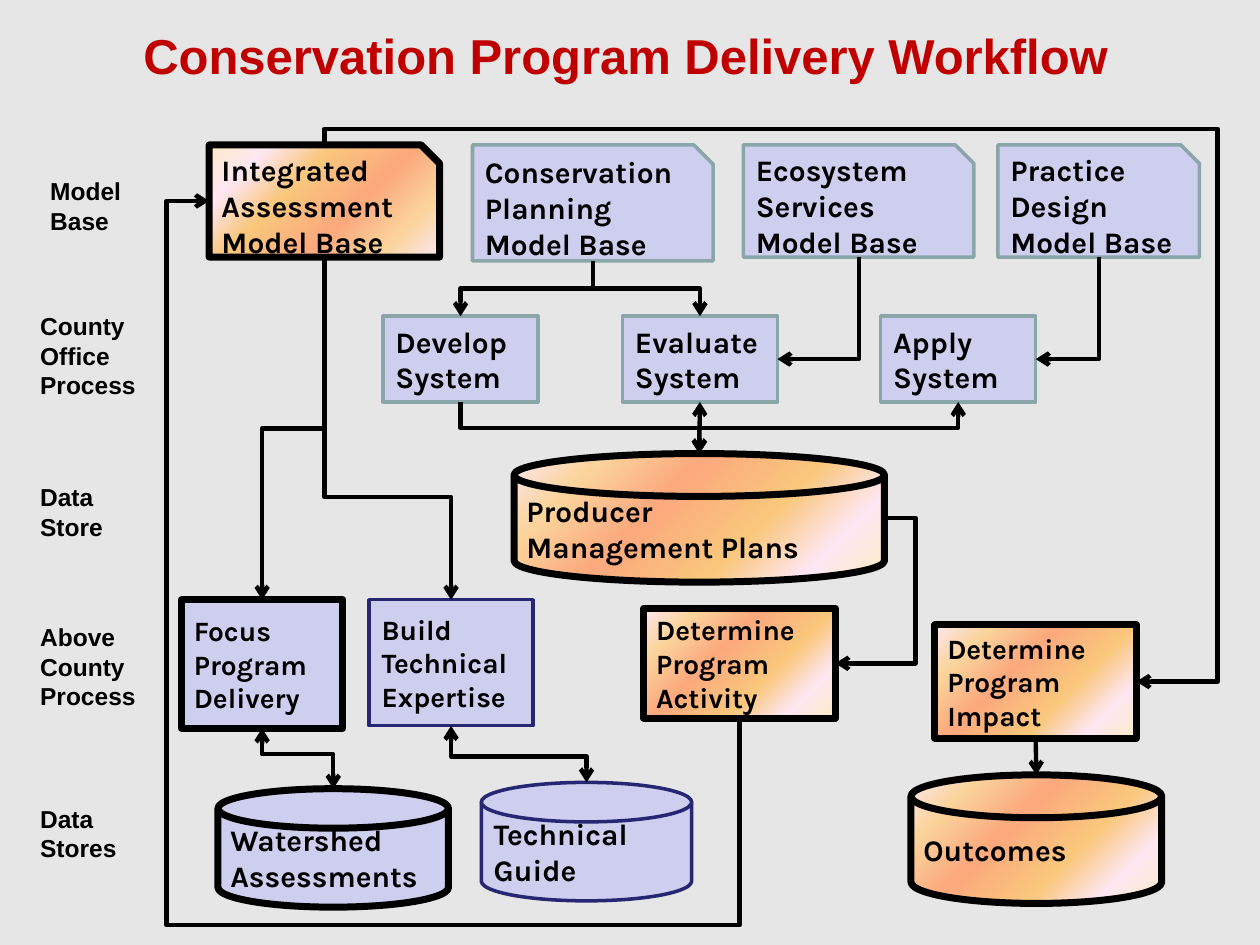
from dataclasses import dataclass

from lxml.etree import SubElement
from pptx import Presentation
from pptx.dml.color import RGBColor
from pptx.enum.shapes import MSO_CONNECTOR as LINE, MSO_SHAPE as SHAPE
from pptx.enum.text import MSO_ANCHOR, PP_ALIGN
from pptx.oxml.ns import qn
from pptx.util import Inches, Pt

TOP, LEFT, BOTTOM, RIGHT = range(4)
PROCESS, MODEL, STORE = (SHAPE.FLOWCHART_PROCESS, SHAPE.SNIP_1_RECTANGLE,
                         SHAPE.FLOWCHART_MAGNETIC_DISK)


@dataclass(frozen=True)
class Theme:
    background: str = "E6E6E6"
    title: str = "C00000"
    ink: str = "000000"
    lilac: str = "CECEEF"
    sage: str = "8AA6A8"
    navy: str = "262673"
    sunset: tuple = ((0, "FBEAC7"), (18, "FEE7F2"), (36, "FAC77D"),
                     (61, "FBA97D"), (82, "FBD49C"), (100, "FEE7F2"))
    label_font: str = "Arial"
    node_font: str = "Karla"
    title_size: int = 28
    label_size: int = 14
    node_size: int = 17
    small_node_size: int = 16
    thin: float = 2
    flow: float = 2.5
    thick: float = 4


THEME = Theme()


@dataclass(frozen=True)
class Box:
    """An area of the slide, in inches."""
    left: float
    top: float
    width: float
    height: float

    def inner(self, left, width, top=0, height=None):
        return Box(self.left + left, self.top + top, width, height or self.height)

    def emu(self):
        return [Inches(v) for v in (self.left, self.top, self.width, self.height)]


@dataclass(frozen=True)
class Look:
    line: str
    width: float
    angle: int = None  # gradient direction; plain lilac when None


PLAIN = Look(THEME.sage, THEME.thin)
SUPPORT = Look(THEME.navy, THEME.thin)
FOCUS = Look(THEME.ink, THEME.thick)
KEY = Look(THEME.ink, THEME.thick, 135)
KEY_SOURCE = Look(THEME.ink, THEME.thick, 315)


def write(frame, lines, font, size, color, align=PP_ALIGN.LEFT):
    frame.word_wrap = True
    frame.text = "\n".join(lines)
    for paragraph in frame.paragraphs:
        paragraph.alignment = align
        paragraph.font.name, paragraph.font.size = font, Pt(size)
        paragraph.font.bold = True
        paragraph.font.color.rgb = RGBColor.from_string(color)


def fill_sunset(node, angle):
    node.fill.gradient()
    node.fill.gradient_angle = angle
    stops = node._element.spPr.find(qn("a:gradFill")).find(qn("a:gsLst"))
    for stop in list(stops):
        stops.remove(stop)
    for percent, color in THEME.sunset:
        stop = SubElement(stops, qn("a:gs"), pos=str(percent * 1000))
        SubElement(stop, qn("a:srgbClr"), val=color)


def add_node(slide, kind, box, look, lines, size):
    node = slide.shapes.add_shape(kind, *box.emu())
    node.shadow.inherit = False
    if look.angle is None:
        node.fill.solid()
        node.fill.fore_color.rgb = RGBColor.from_string(THEME.lilac)
    else:
        fill_sunset(node, look.angle)
    node.line.color.rgb = RGBColor.from_string(look.line)
    node.line.width = Pt(look.width)
    node.text_frame.vertical_anchor = MSO_ANCHOR.MIDDLE
    write(node.text_frame, lines, THEME.node_font, size, THEME.ink)
    return node


def add_band(slide, band, kind, nodes, size=THEME.node_size):
    """Place one row of nodes; each is (place in the band, look, lines)."""
    return [add_node(slide, kind, band.inner(*place), look, lines, size)
            for place, look, lines in nodes]


def add_title(slide, box, text):
    title = slide.shapes.title
    title.left, title.top, title.width, title.height = box.emu()
    title.text_frame.vertical_anchor = MSO_ANCHOR.TOP
    write(title.text_frame, [text], THEME.label_font, THEME.title_size,
          THEME.title, PP_ALIGN.CENTER)


def add_row_labels(slide, column, labels):
    for indent, top, height, lines in labels:
        box = column.inner(indent, column.width - indent, top, height)
        label = slide.shapes.add_textbox(*box.emu())
        write(label.text_frame, lines, THEME.label_font, THEME.label_size, THEME.ink)


def side_point(node, side):
    across, down = {TOP: (0.5, 0), LEFT: (0, 0.5), BOTTOM: (0.5, 1), RIGHT: (1, 0.5)}[side]
    return int(node.left + node.width * across), int(node.top + node.height * down)


def bend(link, start, end, vertical, bends):
    """Turn a link into an elbow; bends are shares of the way along each axis."""
    (x1, y1), (x2, y2) = start, end
    along, across = (y2 - y1, x2 - x1) if vertical else (x2 - x1, y2 - y1)
    link.width, link.height = abs(along), abs(across)
    link.left = (x1 + x2 - link.width) // 2
    link.top = (y1 + y2 - link.height) // 2
    frame = link._element.spPr.find(qn("a:xfrm"))
    frame.set("rot", "5400000" if vertical else "0")
    frame.set("flipH", str(int(along < 0)))
    frame.set("flipV", str(int((across > 0) if vertical else (across < 0))))
    geometry = link._element.spPr.find(qn("a:prstGeom"))
    geometry.set("prst", f"bentConnector{len(bends) + 2}")
    for number, share in enumerate(bends, 1):
        SubElement(geometry.find(qn("a:avLst")), qn("a:gd"),
                   name=f"adj{number}", fmla=f"val {round(share * 100000)}")


def add_flow(slide, source, out, target, into, bends=(0.5,), heads=("tailEnd",)):
    """Link two sides; bends of None gives a straight line."""
    start, end = side_point(source, out), side_point(target, into)
    kind = LINE.STRAIGHT if bends is None else LINE.ELBOW
    link = slide.shapes.add_connector(kind, *start, *end)
    if source.auto_shape_type != STORE:
        link.begin_connect(source, out)
    if target.auto_shape_type != STORE:
        link.end_connect(target, into)
    if bends is not None:
        bend(link, start, end, out in (TOP, BOTTOM), bends)
    link.line.color.rgb = RGBColor.from_string(THEME.ink)
    link.line.width = Pt(THEME.flow)
    outline = link._element.spPr.find(qn("a:ln"))
    for head in heads:
        SubElement(outline, qn(f"a:{head}"), type="arrow")
    SubElement(link._element.spPr, qn("a:effectLst"))


def add_flows(slide, models, offices, plans, above, stores):
    integrated, planning, ecosystem, design = models
    develop, evaluate, apply = offices
    focus, build, activity, impact = above
    watershed, guide, outcomes = stores
    both = ("headEnd", "tailEnd")
    for flow in (
        (planning, BOTTOM, evaluate, TOP),
        (planning, BOTTOM, develop, TOP),
        (design, BOTTOM, apply, RIGHT, ()),
        (ecosystem, BOTTOM, evaluate, RIGHT, ()),
        (integrated, TOP, impact, RIGHT, (-0.03, 1.1)),
        (integrated, BOTTOM, focus, TOP),
        (integrated, BOTTOM, build, TOP, (0.7,)),
        (plans, RIGHT, activity, RIGHT, (-0.63,)),
        (activity, BOTTOM, integrated, LEFT, (-0.4, 1.08)),
        (build, BOTTOM, guide, TOP, (0.54,), both),
        (focus, BOTTOM, watershed, TOP, (0.43,), both),
        (impact, BOTTOM, outcomes, TOP, None),
        (develop, BOTTOM, plans, TOP),
        (evaluate, BOTTOM, plans, TOP, None, both),
        (apply, BOTTOM, plans, TOP, (0.5,), both),
    ):
        add_flow(slide, *flow)


def main():
    deck = Presentation()
    deck.slide_width, deck.slide_height = Inches(10), Inches(7.5)
    slide = deck.slides.add_slide(deck.slide_layouts[5])
    slide.background.fill.solid()
    slide.background.fill.fore_color.rgb = RGBColor.from_string(THEME.background)

    add_title(slide, Box(0.31, 0.15, 9.31, 0.57), "Conservation Program Delivery Workflow")
    add_row_labels(slide, Box(0.22, 1.35, 1.02, 5.55), (
        (0.08, 0, 0.57, ["Model", "Base"]), (0, 1.07, 0.81, ["County", "Office Process"]),
        (0, 2.43, 0.57, ["Data Store"]), (0, 3.54, 0.81, ["Above", "County", "Process"]),
        (0, 4.98, 0.57, ["Data Stores"])))

    models = add_band(slide, Box(1.66, 1.15, 7.86, 0.89), MODEL, (
        ((0, 1.83), KEY_SOURCE, ["Integrated", "Assessment", "Model Base"]),
        ((2.09, 1.91, 0, 0.92), PLAIN, ["Conservation", "Planning", "Model Base"]),
        ((4.24, 1.83), PLAIN, ["Ecosystem Services", "Model Base"]),
        ((6.26, 1.6), PLAIN, ["Practice", "Design", "Model Base"])))
    offices = add_band(slide, Box(3.04, 2.51, 5.18, 0.68), PROCESS, (
        ((0, 1.23), PLAIN, ["Develop System"]), ((1.9, 1.23), PLAIN, ["Evaluate System"]),
        ((3.95, 1.23), PLAIN, ["Apply", "System"])))
    [plans] = add_band(slide, Box(4.08, 3.6, 2.94, 1.02), STORE, (
        ((0, 2.94), KEY, ["Producer", "Management Plans"]),))
    above = add_band(slide, Box(1.44, 4.76, 7.58, 1.02), PROCESS, (
        ((0, 1.28), FOCUS, ["Focus", "Program", "Delivery"]),
        ((1.49, 1.3, 0, 1), SUPPORT, ["Build", "Technical", "Expertise"]),
        ((3.67, 1.52, 0.07, 0.87), KEY, ["Determine Program", "Activity"]),
        ((5.98, 1.6, 0.2, 0.9), KEY, ["Determine Program", "Impact"])), THEME.small_node_size)
    stores = add_band(slide, Box(1.73, 6.15, 7.49, 1.02), STORE, (
        ((0, 1.83, 0.11, 0.94), FOCUS, ["Watershed Assessments"]),
        ((2.09, 1.67, 0.06, 0.94), SUPPORT, ["Technical", "Guide"]),
        ((5.5, 1.99), KEY, ["Outcomes"])))
    add_flows(slide, models, offices, plans, above, stores)
    deck.save("out.pptx")


if __name__ == "__main__":
    main()
